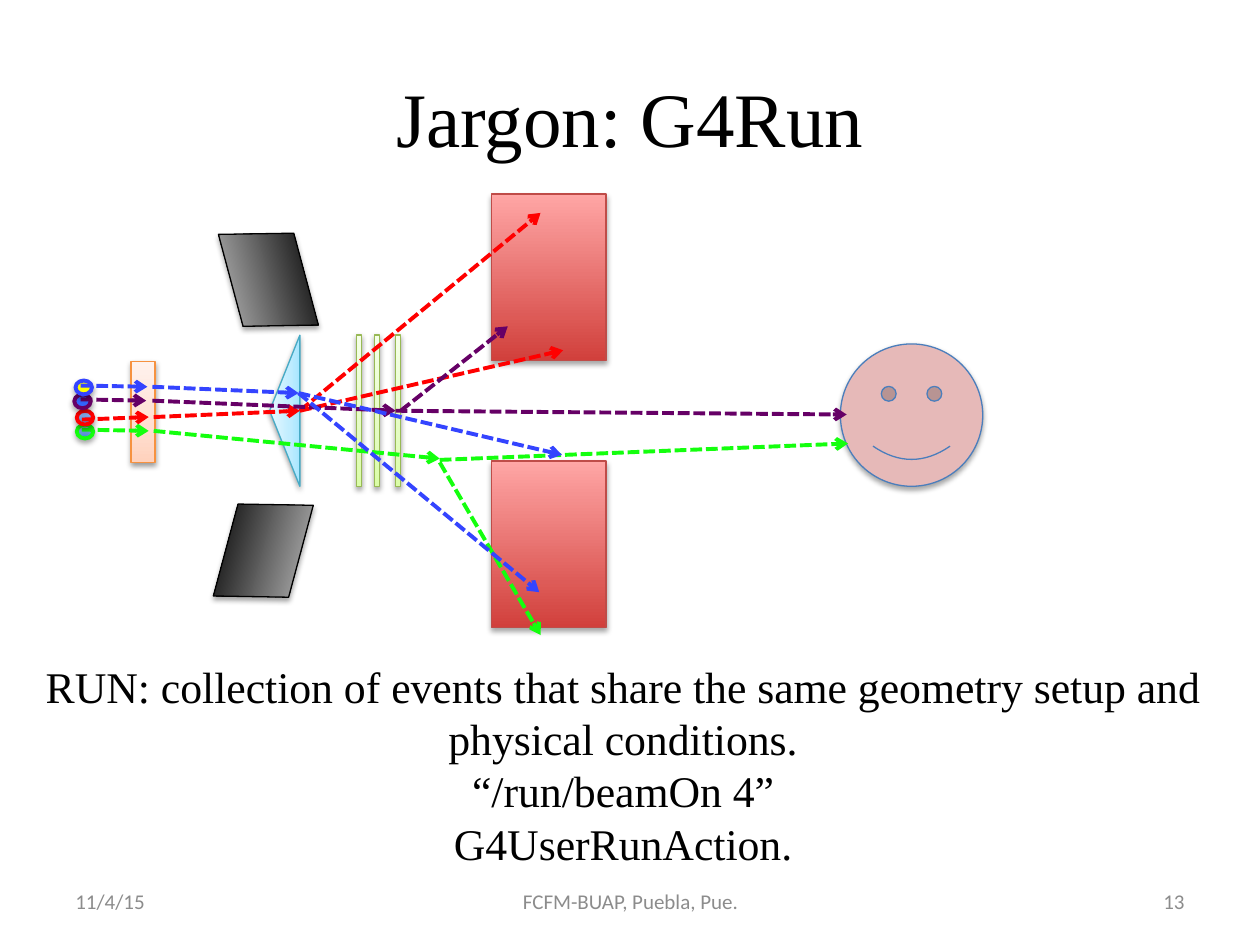
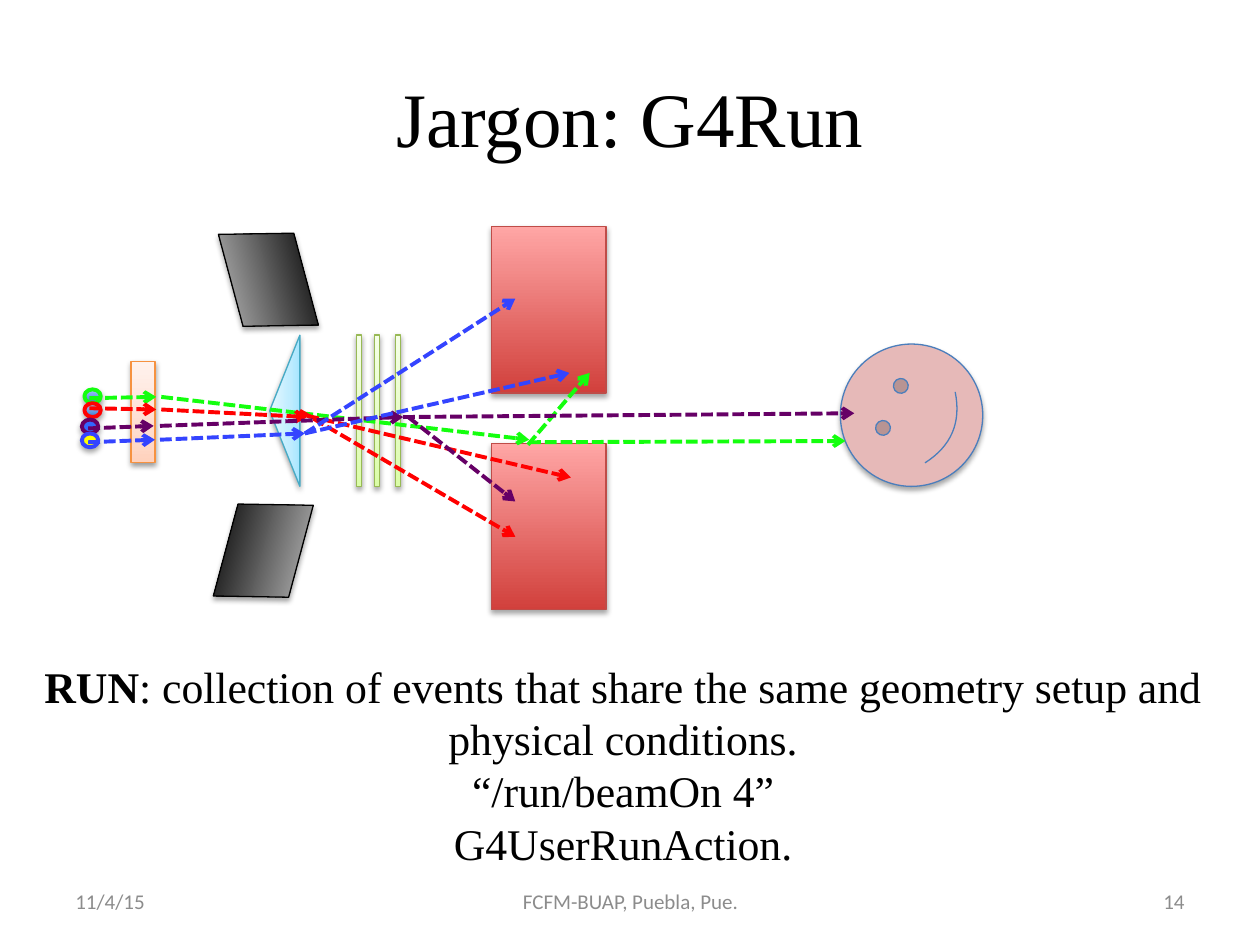
from dataclasses import dataclass

from lxml.etree import SubElement
from pptx import Presentation
from pptx.dml.color import RGBColor
from pptx.enum.dml import MSO_LINE
from pptx.enum.shapes import MSO_CONNECTOR, MSO_SHAPE as Shape
from pptx.enum.text import MSO_ANCHOR, PP_ALIGN as Align
from pptx.oxml.ns import qn
from pptx.util import Inches, Pt


@dataclass(frozen=True)
class Theme:
    serif: str = "Times New Roman"
    sans: str = "Calibri"
    title_size: int = 44
    caption_size: int = 25
    footer_size: int = 12
    ink: str = "000000"
    muted: str = "8C8C8C"
    green: str = "14FF0E"
    red: str = "FF0000"
    purple: str = "660066"
    blue: str = "3444FF"
    thin: float = 0.75
    thick: float = 2.25


@dataclass(frozen=True)
class Finish:
    """Fill stops as (percent, colour), outline, and shadow opacity and distance."""
    stops: tuple
    outline: str
    width: float = Theme.thin
    shadow_alpha: int = 35
    shadow_distance: float = 1.8


theme = Theme()
window_finish = Finish(((0, "FFD2BD"), (35, "FFDED0"), (100, "FFF2ED")), "F69240",
                       shadow_alpha=38, shadow_distance=1.6)
filter_finish = Finish(((0, "A7E6FF"), (35, "C1EDFF"), (100, "E7F8FF")), "46AAC5",
                       shadow_alpha=38, shadow_distance=1.6)
chamber_finish = Finish(((0, "DAFDA7"), (35, "E4FCC2"), (100, "F5FFE7")), "98B955",
                        shadow_alpha=38, shadow_distance=1.6)
shield_finish = Finish(((0, "000000"), (100, "BDBDBD")), "000000")
jaw_finish = Finish(((0, "D1403C"), (100, "FFA6A5")), "BF4C48")
patient_finish = Finish(((0, "E6B9B8"),), "4B7EBC")

steel = ((0, "3F80CE"), (100, "A4C4FF"))
cores = {theme.green: steel, theme.red: steel,
         theme.purple: ((0, "3366FF"),), theme.blue: ((0, "FFFF00"),)}


def add_text(page, box, lines, size, font, colour, align=Align.CENTER):
    """Each line is a list of (text, bold) spans."""
    frame = page.shapes.add_textbox(*map(Inches, box)).text_frame
    frame.word_wrap = True
    frame.vertical_anchor = MSO_ANCHOR.MIDDLE
    for index, spans in enumerate(lines):
        para = frame.add_paragraph() if index else frame.paragraphs[0]
        para.alignment = align
        for text, bold in spans:
            span = para.add_run()
            span.text = text
            span.font.size = Pt(size)
            span.font.name = font
            span.font.bold = bold
            span.font.color.rgb = RGBColor.from_string(colour)


def add_part(page, kind, box, finish, rotation=0, mirrored=False):
    part = page.shapes.add_shape(kind, *map(Inches, box))
    part.rotation = rotation
    properties = part._element.spPr
    if mirrored:
        properties.find(qn("a:xfrm")).set("flipH", "1")
    if len(finish.stops) == 1:
        part.fill.solid()
        part.fill.fore_color.rgb = RGBColor.from_string(finish.stops[0][1])
    else:
        gradient = SubElement(properties, qn("a:gradFill"), rotWithShape="1")
        stop_list = SubElement(gradient, qn("a:gsLst"))
        for percent, colour in finish.stops:
            stop = SubElement(stop_list, qn("a:gs"), pos=str(percent * 1000))
            SubElement(stop, qn("a:srgbClr"), val=colour)
        SubElement(gradient, qn("a:lin"), ang="16200000", scaled="0")
    part.line.color.rgb = RGBColor.from_string(finish.outline)
    part.line.width = Pt(finish.width)
    part.shadow.inherit = False
    shadow = SubElement(properties.find(qn("a:effectLst")), qn("a:outerShdw"),
                        blurRad=str(Pt(3.1)), dist=str(Pt(finish.shadow_distance)),
                        dir="5400000", rotWithShape="0")
    shade = SubElement(shadow, qn("a:srgbClr"), val=theme.ink)
    SubElement(shade, qn("a:alpha"), val=str(finish.shadow_alpha * 1000))


# Each event: colour, source corner, flights after the window, flight from the source.
# A flight is (start x, start y, end x, end y).
runs = [
    {"number": "13", "bold_lead": False, "jaw_tops": (1.54, 3.66), "patient_turn": 0,
     "events": [
         (theme.green, (0.61, 3.37),
          [(1.22, 3.42, 3.49, 3.64), (3.49, 3.65, 6.73, 3.52), (3.49, 3.67, 4.29, 5.04)],
          (0.65, 3.41, 1.18, 3.42)),
         (theme.red, (0.61, 3.26),
          [(1.22, 3.31, 2.38, 3.26), (2.38, 3.26, 4.47, 2.78), (2.38, 3.26, 4.29, 1.69)],
          (0.65, 3.33, 1.18, 3.31)),
         (theme.purple, (0.59, 3.13),
          [(1.21, 3.18, 3.14, 3.26), (3.14, 3.26, 6.72, 3.29), (3.18, 3.26, 4.03, 2.59)],
          (0.64, 3.17, 1.16, 3.18)),
         (theme.blue, (0.6, 3.02),
          [(1.21, 3.07, 2.37, 3.12), (2.37, 3.12, 4.46, 3.61), (2.37, 3.12, 4.28, 4.7)],
          (0.64, 3.06, 1.17, 3.07)),
     ]},
    {"number": "14", "bold_lead": True, "jaw_tops": (1.8, 3.52), "patient_turn": 293,
     "events": [
         (theme.green, (0.67, 3.09),
          [(1.28, 3.15, 4.2, 3.49), (4.2, 3.51, 6.71, 3.5), (4.19, 3.53, 4.68, 2.96)],
          (0.71, 3.16, 1.24, 3.15)),
         (theme.red, (0.67, 3.2),
          [(1.28, 3.25, 2.44, 3.31), (2.44, 3.3, 4.53, 3.79), (2.38, 3.26, 4.09, 4.26)],
          (0.71, 3.24, 1.24, 3.25)),
         (theme.purple, (0.65, 3.33),
          [(1.27, 3.38, 3.2, 3.31), (3.2, 3.31, 6.78, 3.28), (3.24, 3.31, 4.09, 3.98)],
          (0.7, 3.4, 1.22, 3.38)),
         (theme.blue, (0.65, 3.44),
          [(1.27, 3.49, 2.42, 3.44), (2.42, 3.44, 4.52, 2.96), (2.42, 3.44, 4.09, 2.37)],
          (0.7, 3.51, 1.23, 3.49)),
     ]},
]

deck = Presentation()
deck.slide_width, deck.slide_height = Inches(10), Inches(7.5)

for run in runs:
    page = deck.slides.add_slide(deck.slide_layouts[6])

    # Title and footer
    add_text(page, (0.5, 0.3, 9, 1.25), [[("Jargon: G4Run", False)]],
             theme.title_size, theme.serif, theme.ink)
    for left, width, text, align in [
        (0.5, 2.33, "11/4/15", Align.LEFT),
        (3.42, 3.17, "FCFM-BUAP, Puebla, Pue.", Align.CENTER),
        (7.17, 2.33, run["number"], Align.RIGHT),
    ]:
        add_text(page, (left, 6.95, width, 0.4), [[(text, False)]],
                 theme.footer_size, theme.sans, theme.muted, align)

    # Beam line
    add_part(page, Shape.RECTANGLE, (1.04, 2.87, 0.19, 0.8), window_finish)
    add_part(page, Shape.ISOSCELES_TRIANGLE, (1.66, 3.14, 1.2, 0.24), filter_finish, 270)
    add_part(page, Shape.PARALLELOGRAM, (1.68, 1.93, 0.9, 0.58), shield_finish, 255)
    add_part(page, Shape.PARALLELOGRAM, (1.64, 4.08, 0.9, 0.58), shield_finish, 105, True)
    for left in (2.83, 2.97, 3.14):
        add_part(page, Shape.RECTANGLE, (left, 2.66, 0.04, 1.2), chamber_finish)
    for top in run["jaw_tops"]:
        add_part(page, Shape.RECTANGLE, (3.9, top, 0.91, 1.32), jaw_finish)
    add_part(page, Shape.SMILEY_FACE, (6.67, 2.73, 1.13, 1.13), patient_finish,
             run["patient_turn"])

    # Caption
    add_text(page, (0, 5.44, 9.89, 1.25), [
        [("RUN", run["bold_lead"]),
         (": collection of events that share the same geometry setup and "
          "physical conditions.", False)],
        [("“/run/beamOn 4”", False)],
        [("G4UserRunAction.", False)],
    ], theme.caption_size, theme.serif, theme.ink)

    # Events
    for colour, source, flights, launch in run["events"]:
        for flight in flights + [launch]:
            if flight is launch:
                add_part(page, Shape.OVAL, (*source, 0.13, 0.11),
                         Finish(cores[colour], colour, theme.thick))
            arrow = page.shapes.add_connector(MSO_CONNECTOR.STRAIGHT, *map(Inches, flight))
            arrow.line.color.rgb = RGBColor.from_string(colour)
            arrow.line.width = Pt(theme.thick)
            arrow.line.dash_style = MSO_LINE.SQUARE_DOT
            properties = arrow._element.spPr
            SubElement(properties.find(qn("a:ln")), qn("a:tailEnd"), type="arrow")
            SubElement(properties, qn("a:effectLst"))

deck.save("out.pptx")
